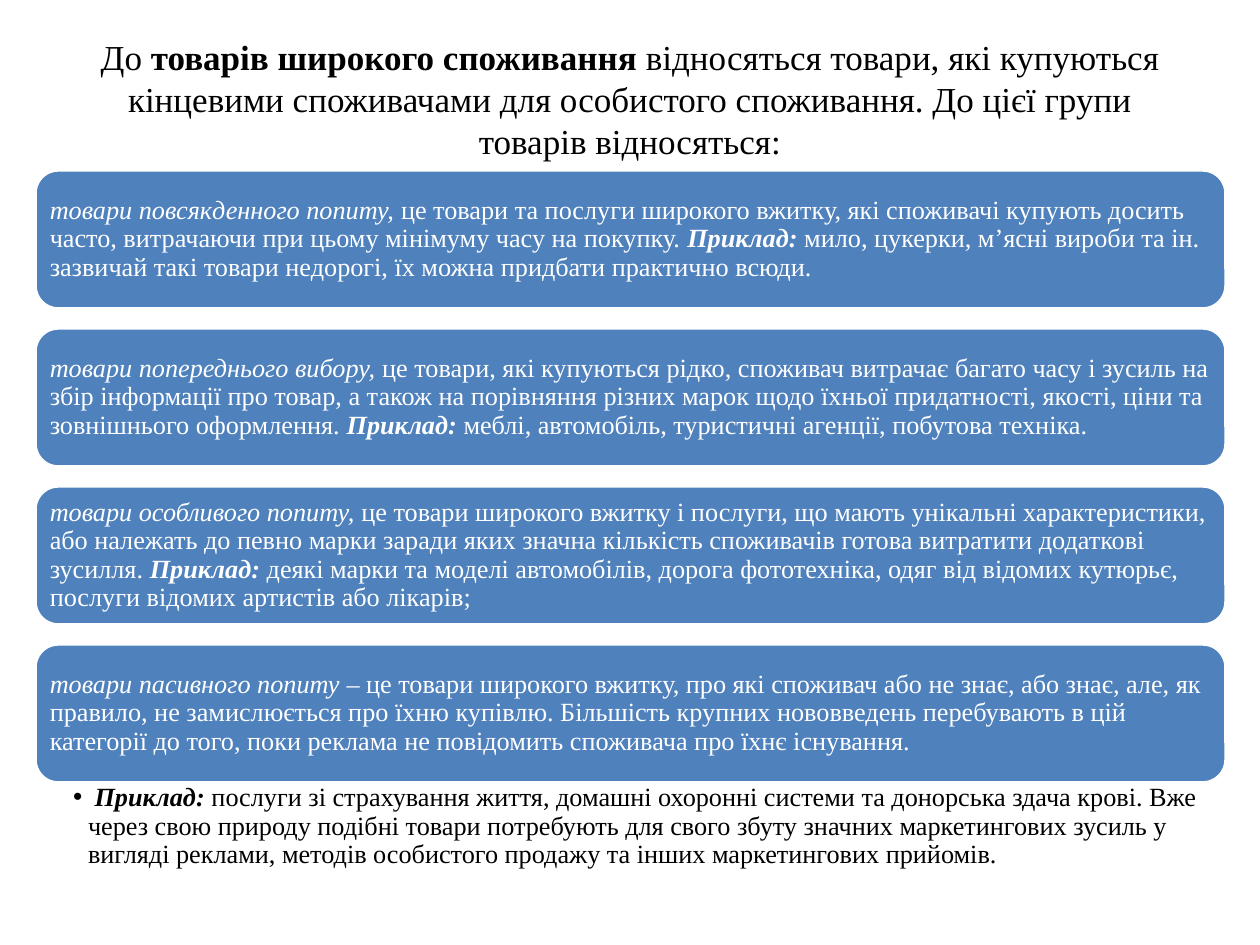
"""Build a slide describing the four groups of consumer goods."""
from lxml.etree import SubElement
from pptx import Presentation
from pptx.dml.color import RGBColor
from pptx.enum.shapes import MSO_SHAPE
from pptx.enum.text import MSO_ANCHOR, MSO_AUTO_SIZE, PP_ALIGN
from pptx.oxml.ns import qn
from pptx.util import Emu, Pt

COLORS = {"card": "4F81BD", "light": "FFFFFF", "dark": "000000"}
FONT = "Times New Roman"
EXAMPLE = "Приклад: "


def px(count):
    return Emu(round(count * 914400 / 126))


def add_span(paragraph, text, size=15, color="dark", bold=False, italic=False):
    span = paragraph.add_run()
    span.text = text
    span.font.name = FONT
    span.font.size = Pt(size)
    span.font.bold = bold
    span.font.italic = italic
    span.font.color.rgb = RGBColor.from_string(COLORS[color])


deck = Presentation()
deck.slide_width, deck.slide_height = px(1260), px(945)
page = deck.slides.add_slide(deck.slide_layouts[1])

title = page.shapes.title
title.left, title.top, title.width, title.height = px(63), px(35), px(1134), px(130)
frame = title.text_frame
frame.auto_size = MSO_AUTO_SIZE.NONE
frame.vertical_anchor = MSO_ANCHOR.TOP
frame.margin_top = frame.margin_bottom = 0
heading = frame.paragraphs[0]
heading.alignment = PP_ALIGN.CENTER
add_span(heading, "До ", size=20)
add_span(heading, "товарів широкого споживання ", size=20, bold=True)
add_span(
    heading,
    "відносяться товари, які купуються кінцевими споживачами для особистого "
    "споживання. До цієї групи товарів відносяться:",
    size=20,
)

groups = [
    (
        "товари повсякденного попиту, ",
        "це товари та послуги широкого вжитку, які споживачі купують досить часто, "
        "витрачаючи при цьому мінімуму часу на покупку. ",
        "мило, цукерки, м’ясні вироби та ін. зазвичай такі товари недорогі, "
        "їх можна придбати практично всюди.",
    ),
    (
        "товари попереднього вибору, ",
        "це товари, які купуються рідко, споживач витрачає багато часу і зусиль на збір "
        "інформації про товар, а також на порівняння різних марок щодо їхньої "
        "придатності, якості, ціни та зовнішнього оформлення. ",
        "меблі, автомобіль, туристичні агенції, побутова техніка.",
    ),
    (
        "товари особливого попиту, ",
        "це товари широкого вжитку і послуги, що мають унікальні характеристики, або "
        "належать до певно марки заради яких значна кількість споживачів готова "
        "витратити додаткові зусилля. ",
        "деякі марки та моделі автомобілів, дорога фототехніка, одяг від відомих "
        "кутюрьє, послуги відомих артистів або лікарів;",
    ),
    (
        "товари пасивного попиту ",
        "– це товари широкого вжитку, про які споживач або не знає, або знає, але, як "
        "правило, не замислюється про їхню купівлю. Більшість крупних нововведень "
        "перебувають в цій категорії до того, поки реклама не повідомить споживача "
        "про їхнє існування.",
        None,
    ),
]

for index, (name, description, example) in enumerate(groups):
    card = page.shapes.add_shape(
        MSO_SHAPE.ROUNDED_RECTANGLE, px(35), px(170 + 158 * index), px(1191), px(139)
    )
    card.shadow.inherit = False
    card.fill.solid()
    card.fill.fore_color.rgb = RGBColor.from_string(COLORS["card"])
    card.line.color.rgb = RGBColor.from_string(COLORS["light"])
    card.line.width = Pt(2)
    frame = card.text_frame
    frame.word_wrap = True
    frame.vertical_anchor = MSO_ANCHOR.MIDDLE
    frame.margin_left = frame.margin_right = px(8)
    frame.margin_top = frame.margin_bottom = px(8)
    paragraph = frame.paragraphs[0]
    paragraph.alignment = PP_ALIGN.LEFT
    paragraph.line_spacing = 0.9
    add_span(paragraph, name, color="light", italic=True)
    add_span(paragraph, description, color="light")
    if example:
        add_span(paragraph, EXAMPLE, color="light", bold=True, italic=True)
        add_span(paragraph, example, color="light")

body = page.placeholders[1]
body.left, body.top, body.width, body.height = px(35), px(782), px(1191), px(112)
frame = body.text_frame
frame.auto_size = MSO_AUTO_SIZE.NONE
frame.margin_left, frame.margin_right = px(38), px(15)
frame.margin_top = frame.margin_bottom = px(2)
paragraph = frame.paragraphs[0]
properties = paragraph._p.get_or_add_pPr()
properties.set("marL", str(px(15)))
properties.set("indent", str(px(-15)))
SubElement(properties, qn("a:buChar")).set("char", "•")
paragraph.line_spacing = 0.9
paragraph.space_before = Pt(0)
add_span(paragraph, " " + EXAMPLE, bold=True, italic=True)
add_span(
    paragraph,
    "послуги зі страхування життя, домашні охоронні системи та донорська здача крові. "
    "Вже через свою природу подібні товари потребують для свого збуту значних "
    "маркетингових зусиль у вигляді реклами, методів особистого продажу та інших "
    "маркетингових прийомів.",
)

deck.save("out.pptx")
